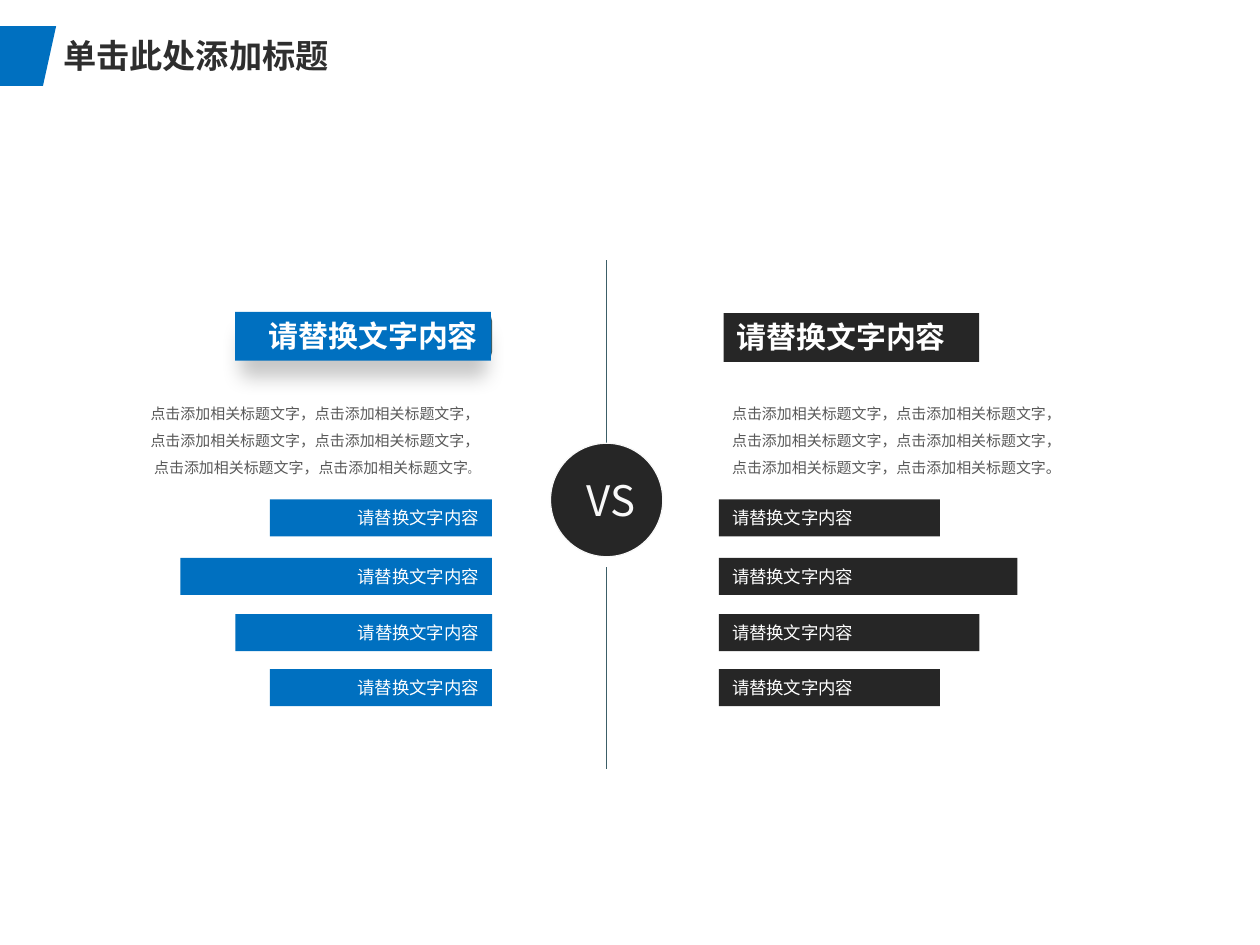
import pptx
import pptx.util
import pptx.dml.color
import pptx.enum.shapes
import pptx.enum.text
import pptx.oxml
import pptx.oxml.ns

RGB = pptx.dml.color.RGBColor
KIND = pptx.enum.shapes.MSO_SHAPE
ALIGN = pptx.enum.text.PP_ALIGN
ANCHOR = pptx.enum.text.MSO_ANCHOR

BLUE = RGB(0x00, 0x70, 0xC0)
DARK = RGB(0x26, 0x26, 0x26)
TEAL = RGB(0x3C, 0x5E, 0x67)
INK = RGB(0x2E, 0x2E, 0x2E)
GREY = RGB(0x59, 0x59, 0x59)
PALE = RGB(0xF8, 0xF8, 0xF8)
WHITE = RGB(0xFF, 0xFF, 0xFF)

PX = 9144  # 100 px to the inch
LABEL = "请替换文字内容"
PHRASE = "点击添加相关标题文字"
BAR_TOPS = (156, 205, 252, 298)
SHADOW = (
    '<a:effectLst %s><a:outerShdw blurRad="152400" dist="152400" dir="5400000"'
    ' sx="96000" sy="96000" algn="t" rotWithShape="0"><a:srgbClr val="000000">'
    '<a:alpha val="22000"/></a:srgbClr></a:outerShdw></a:effectLst>'
    % pptx.oxml.ns.nsdecls("a"))


def emu(*lengths):
    return [pptx.util.Emu(n * PX) for n in lengths]


def style(run, size, face, color, bold=False):
    """Format a run, with one face for Latin and East Asian text."""
    font = run.font
    font.size = pptx.util.Pt(size)
    font.bold = bold
    font.color.rgb = color
    font.name = face
    east = pptx.oxml.parse_xml('<a:ea %s/>' % pptx.oxml.ns.nsdecls("a"))
    east.set("typeface", face)
    run._r.get_or_add_rPr().append(east)


def write(shape, text, size, face, color, bold=False, align=ALIGN.LEFT,
          anchor=ANCHOR.TOP, space=None, wrap=True, inset=11):
    frame = shape.text_frame
    frame.word_wrap = wrap
    frame.vertical_anchor = anchor
    frame.margin_left, frame.margin_right = emu(inset, inset)
    frame.margin_top, frame.margin_bottom = emu(5, 5)
    frame.text = text
    for para in frame.paragraphs:
        para.alignment = align
        para.line_spacing = space
        for run in para.runs:
            style(run, size, face, color, bold)
    return frame


def block(slide, kind, box, fill, line=None):
    shape = slide.shapes.add_shape(kind, *emu(*box))
    shape.shadow.inherit = False
    shape.fill.solid()
    shape.fill.fore_color.rgb = fill
    if line is None:
        shape.line.fill.background()
    else:
        shape.line.color.rgb = line
        shape.line.width = pptx.util.Pt(0.75)
    return shape


def title(slide, left, top, width):
    pen = slide.shapes.build_freeform(left, top, scale=PX)
    pen.add_line_segments([(left + 47, top), (left + 36, top + 50),
                           (left, top + 50)])
    flag = pen.convert_to_shape()
    flag.shadow.inherit = False
    flag.fill.solid()
    flag.fill.fore_color.rgb = BLUE
    flag.line.fill.background()
    head = slide.shapes.add_textbox(*emu(left + 43, top + 3, width, 44))
    write(head, "单击此处添加标题", 20, "Calibri", INK, True, inset=10)


def divide(slide, mid, top):
    """Draw the two rules and the VS disc around the line x = mid."""
    for start in (top, top + 257):
        rule = slide.shapes.add_connector(
            pptx.enum.shapes.MSO_CONNECTOR.STRAIGHT,
            *emu(mid, start, mid, start + 169))
        rule.line.color.rgb = TEAL
        rule.line.width = pptx.util.Pt(0.75)
        rule._element.spPr.append(pptx.oxml.parse_xml(
            '<a:effectLst %s/>' % pptx.oxml.ns.nsdecls("a")))
    block(slide, KIND.OVAL, (mid - 47, top + 153, 94, 95), DARK, PALE)
    mark = slide.shapes.add_textbox(*emu(mid - 28, top + 174, 65, 53))
    write(mark, "VS", 25.3, "Noto Sans CJK SC", PALE, wrap=False)


def side(slide, left, top, width, fill, head, bars, align):
    """Draw one column; head is the heading's box within the column."""
    dx, dy, wide, high = head
    band = block(slide, KIND.RECTANGLE, (left + dx, top + dy, wide, high), fill)
    write(band, LABEL, 18, "Calibri", WHITE, True, align)

    note = slide.shapes.add_textbox(*emu(left, top + 64, width, 79))
    lines = [PHRASE + "，" + PHRASE + end for end in "，，。"]
    frame = write(note, "\n".join(lines), 9, "Arial", GREY,
                  align=align, space=1.5)

    for drop, span in zip(BAR_TOPS, bars):
        start = left + width - span if align == ALIGN.RIGHT else left
        bar = block(slide, KIND.RECTANGLE, (start, top + drop, span, 31), fill)
        write(bar, LABEL, 10.5, "Arial", WHITE, align=align,
              anchor=ANCHOR.MIDDLE)
    return frame


def shade(slide, left, top):
    """Lay the soft shadow that falls below the blue heading."""
    base = block(slide, KIND.ROUNDED_RECTANGLE, (left, top, 215, 39), TEAL)
    spPr = base._element.spPr
    spPr.remove(spPr.find(pptx.oxml.ns.qn("a:effectLst")))
    spPr.append(pptx.oxml.parse_xml(SHADOW))


def main():
    deck = pptx.Presentation()
    deck.slide_width, deck.slide_height = emu(1055, 791)
    slide = deck.slides.add_slide(deck.slide_layouts[6])

    title(slide, 0, 22, 927)
    divide(slide, 508, 218)
    shade(slide, 197, 262)
    frame = side(slide, 97, 262, 315, BLUE, (100, -1, 214, 41),
                 (186, 261, 215, 186), ALIGN.RIGHT)
    last = frame.paragraphs[-1]
    last.runs[0].text = last.text[:-1]
    stop = last.add_run()
    stop.text = "。"
    style(stop, 6.8, "Arial", GREY)
    side(slide, 602, 262, 315, DARK, (4, 0, 214, 41),
         (185, 250, 218, 185), ALIGN.LEFT)

    deck.save("out.pptx")


if __name__ == "__main__":
    main()
